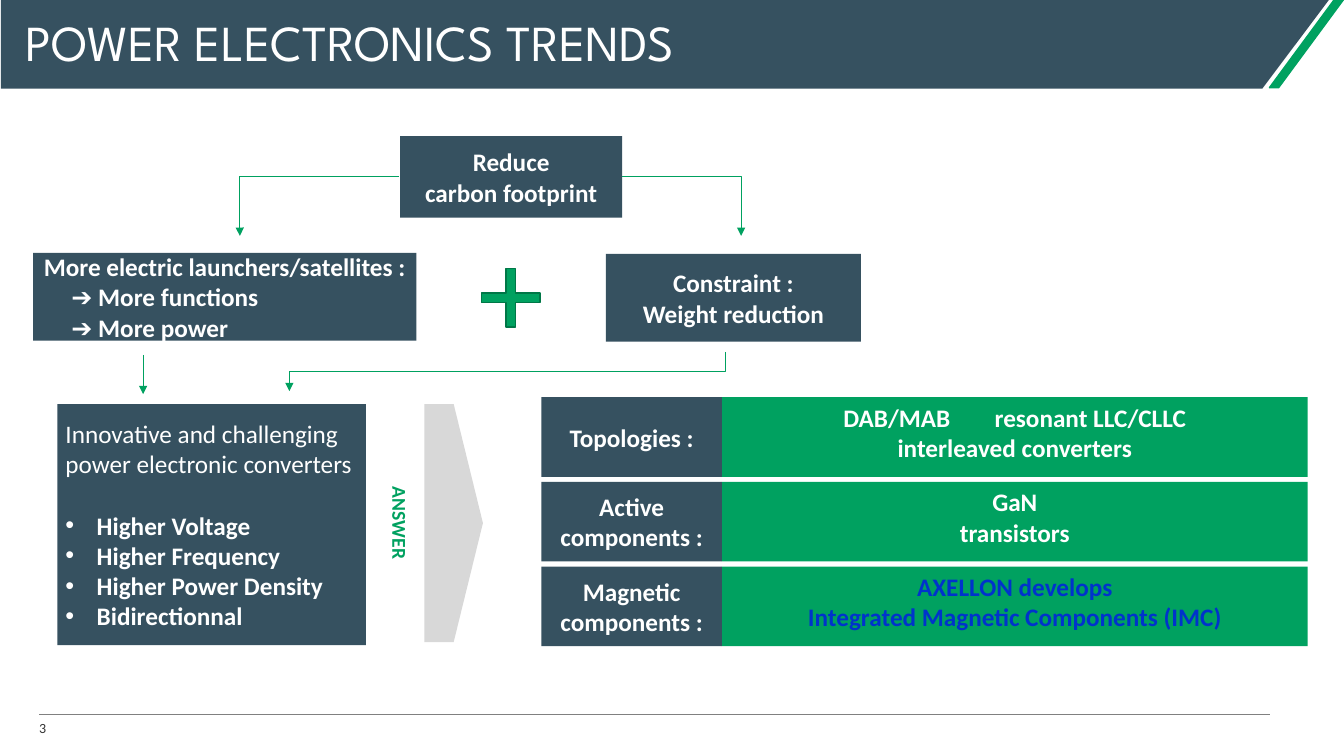
"""Build the power electronics trends slide."""
import dataclasses

import pptx
import pptx.dml.color
import pptx.enum.shapes
import pptx.enum.text
import pptx.oxml
import pptx.oxml.ns
import pptx.util

Inches = pptx.util.Inches
Pt = pptx.util.Pt
SHAPE = pptx.enum.shapes.MSO_SHAPE
CONNECTOR = pptx.enum.shapes.MSO_CONNECTOR
ALIGN = pptx.enum.text.PP_ALIGN
ANCHOR = pptx.enum.text.MSO_ANCHOR


@dataclasses.dataclass(frozen=True)
class Theme:
    """Colours, fonts and type sizes."""
    navy: str = "365160"
    green: str = "00A160"
    dark_green: str = "007747"
    blue: str = "0033CC"
    grey: str = "D8D8D8"
    rule: str = "808080"
    number: str = "333333"
    white: str = "FFFFFF"
    heading: str = "League Spartan"
    body: str = "Calibri"
    title_size: int = 36
    body_size: int = 18
    answer_size: int = 14
    number_size: int = 10


THEME = Theme()
TITLE = "POWER ELECTRONICS TRENDS"
PAGE = "3"
ANSWER = "ANSWER"
ARROW_ITEM = {"align": ALIGN.JUSTIFY, "margin": 0.28}
BULLET_ITEM = {"bullet": "•", "margin": 0.31, "bold": True}
DRIVERS = [
    ((3.97, 1.35, 2.2, 0.81), ["Reduce", "carbon footprint"]),
    ((0.33, 2.51, 3.8, 0.87), ["More electric launchers/satellites :",
                               ("➔ More functions", ARROW_ITEM),
                               ("➔ More power", ARROW_ITEM)]),
    ((6.01, 2.52, 2.53, 0.87), ["Constraint :", "Weight reduction"]),
]
CONVERTERS = [
    "Innovative and challenging power electronic converters",
    ("Higher Voltage", {**BULLET_ITEM, "before": 22}),
    ("Higher Frequency", BULLET_ITEM),
    ("Higher Power Density", BULLET_ITEM),
    ("Bidirectionnal", BULLET_ITEM),
]
SOLUTIONS = [
    ("Topologies :", ["DAB/MAB\tresonant LLC/CLLC", "interleaved converters"], THEME.white),
    ("Active components :", ["GaN", "transistors"], THEME.white),
    ("Magnetic components :",
     ["AXELLON develops", "Integrated Magnetic Components (IMC)"], THEME.blue),
]
ELBOWS = [
    ((3.96, 1.75, 2.38, 2.34), 1.001, 0),
    ((6.17, 1.75, 7.35, 2.34), 1.001, 0),
    ((4.84, 1.52, 5.23, 5.85), 0.5, 90),
]


def rgb(colour):
    return pptx.dml.color.RGBColor.from_string(colour)


def add_xml(parent, tag, **attributes):
    child = pptx.oxml.parse_xml(f"<a:{tag} {pptx.oxml.ns.nsdecls('a')}/>")
    for key, value in attributes.items():
        child.set(key, str(value))
    parent.append(child)


def write(frame, paragraphs, anchor=ANCHOR.MIDDLE, inset=0.1, wrap=True, **base):
    """Fill a frame with paragraphs, each a string or a (string, format) pair."""
    frame.word_wrap = wrap
    frame.auto_size = pptx.enum.text.MSO_AUTO_SIZE.NONE
    frame.vertical_anchor = anchor
    frame.margin_left = frame.margin_right = Inches(inset)
    frame.margin_top = frame.margin_bottom = Inches(0.05)
    for index, entry in enumerate(paragraphs):
        text, extra = (entry, {}) if isinstance(entry, str) else entry
        look = {"size": THEME.body_size, "font": THEME.body, "colour": THEME.white,
                "bold": False, "align": ALIGN.LEFT, **base, **extra}
        paragraph = frame.paragraphs[0] if index == 0 else frame.add_paragraph()
        paragraph.alignment = look["align"]
        paragraph.line_spacing = look.get("spacing", 1.0)
        if "before" in look:
            paragraph.space_before = Pt(look["before"])
        properties = paragraph._p.get_or_add_pPr()
        if "margin" in look:
            margin = Inches(look["margin"])
            properties.set("marL", str(margin))
            properties.set("indent", str(-margin if "bullet" in look else 0))
        if "bullet" in look:
            add_xml(properties, "buFont", typeface="Arial")
            add_xml(properties, "buChar", char=look["bullet"])
        run = paragraph.add_run()
        run.text = text
        run.font.size = Pt(look["size"])
        run.font.name = look["font"]
        run.font.bold = look["bold"]
        run.font.color.rgb = rgb(look["colour"])


def paint(shape, fill, line=None):
    shape.shadow.inherit = False
    shape.fill.solid()
    shape.fill.fore_color.rgb = rgb(fill)
    if line:
        shape.line.color.rgb = rgb(line)
        shape.line.width = Pt(1)
    else:
        shape.line.fill.background()


def add_block(slide, kind, box, fill, line=None, adjust=None):
    shape = slide.shapes.add_shape(kind, *map(Inches, box))
    paint(shape, fill, line)
    if adjust is not None:
        shape.adjustments[0] = adjust
    return shape


def add_line(slide, kind, ends, colour, width, arrow=True):
    connector = slide.shapes.add_connector(kind, *map(Inches, ends))
    connector.line.color.rgb = rgb(colour)
    connector.line.width = Pt(width)
    if arrow:
        add_xml(connector.line._get_or_add_ln(), "tailEnd", type="triangle")
    add_xml(connector._element.spPr, "effectLst")
    return connector


def add_elbow(slide, ends, bend, turn):
    properties = add_line(slide, CONNECTOR.ELBOW, ends, THEME.green, 0.75)._element.spPr
    guides = properties.find(".//" + pptx.oxml.ns.qn("a:avLst"))
    add_xml(guides, "gd", name="adj1", fmla=f"val {round(bend * 100000)}")
    if turn:
        properties.find(pptx.oxml.ns.qn("a:xfrm")).set("rot", str(turn * 60000))


def add_header(slide):
    outline = slide.shapes.build_freeform(Inches(0.01), Inches(0))
    outline.add_line_segments(
        [(Inches(x), Inches(y)) for x, y in ((13.18, 0), (12.52, 0.88), (0.01, 0.88))])
    paint(outline.convert_to_shape(), THEME.navy)
    add_block(slide, SHAPE.PARALLELOGRAM, (12.59, -0.01, 0.74, 0.88),
              THEME.green, THEME.green, 0.876)
    title = slide.shapes.title
    title.left, title.top, title.width, title.height = map(Inches, (0.15, 0.08, 10.5, 0.73))
    write(title.text_frame, [TITLE], size=THEME.title_size, font=THEME.heading, spacing=0.9)
    slide.shapes._spTree.append(title._element)


def add_footer(slide):
    add_line(slide, CONNECTOR.STRAIGHT, (0.39, 7.09, 12.6, 7.09), THEME.rule, 0.5, arrow=False)
    number = slide.shapes.add_textbox(*map(Inches, (0.29, 7.09, 0.44, 0.27)))
    write(number.text_frame, [PAGE], anchor=ANCHOR.TOP, wrap=False,
          size=THEME.number_size, colour=THEME.number)


def add_drivers(slide):
    for box, lines in DRIVERS:
        driver = add_block(slide, SHAPE.RECTANGLE, box, THEME.navy)
        write(driver.text_frame, lines, bold=True, align=ALIGN.CENTER)
    add_block(slide, SHAPE.MATH_PLUS, (4.67, 2.56, 0.79, 0.79),
              THEME.green, THEME.dark_green, 0.119)
    add_line(slide, CONNECTOR.STRAIGHT, (1.42, 3.52, 1.42, 3.91), THEME.green, 0.75)
    for elbow in ELBOWS:
        add_elbow(slide, *elbow)


def add_answer(slide):
    converters = add_block(slide, SHAPE.RECTANGLE, (0.57, 4.01, 3.06, 2.39), THEME.navy)
    write(converters.text_frame, CONVERTERS, inset=0.08)
    add_block(slide, SHAPE.PENTAGON, (4.21, 4.01, 0.58, 2.36), THEME.grey, adjust=0.5)
    answer = slide.shapes.add_textbox(*map(Inches, (3.39, 5.02, 1.15, 0.34)))
    answer.rotation = 90
    write(answer.text_frame, [ANSWER], anchor=ANCHOR.TOP, size=THEME.answer_size,
          colour=THEME.green, bold=True, align=ALIGN.CENTER)
    left, split, right, top, pitch, height = 5.37, 7.16, 12.97, 3.94, 0.84, 0.79
    for row, (topic, lines, colour) in enumerate(SOLUTIONS):
        y = top + row * pitch
        solution = add_block(slide, SHAPE.RECTANGLE, (split, y, right - split, height), THEME.green)
        write(solution.text_frame, lines, anchor=ANCHOR.TOP, colour=colour,
              bold=True, align=ALIGN.CENTER)
        label = add_block(slide, SHAPE.RECTANGLE, (left, y, split - left, height), THEME.navy)
        write(label.text_frame, [topic], bold=True, align=ALIGN.CENTER)


def main():
    deck = pptx.Presentation()
    deck.slide_width, deck.slide_height = Inches(13.33), Inches(7.5)
    slide = deck.slides.add_slide(deck.slide_layouts[5])
    add_header(slide)
    add_footer(slide)
    add_drivers(slide)
    add_answer(slide)
    deck.save("out.pptx")


if __name__ == "__main__":
    main()
